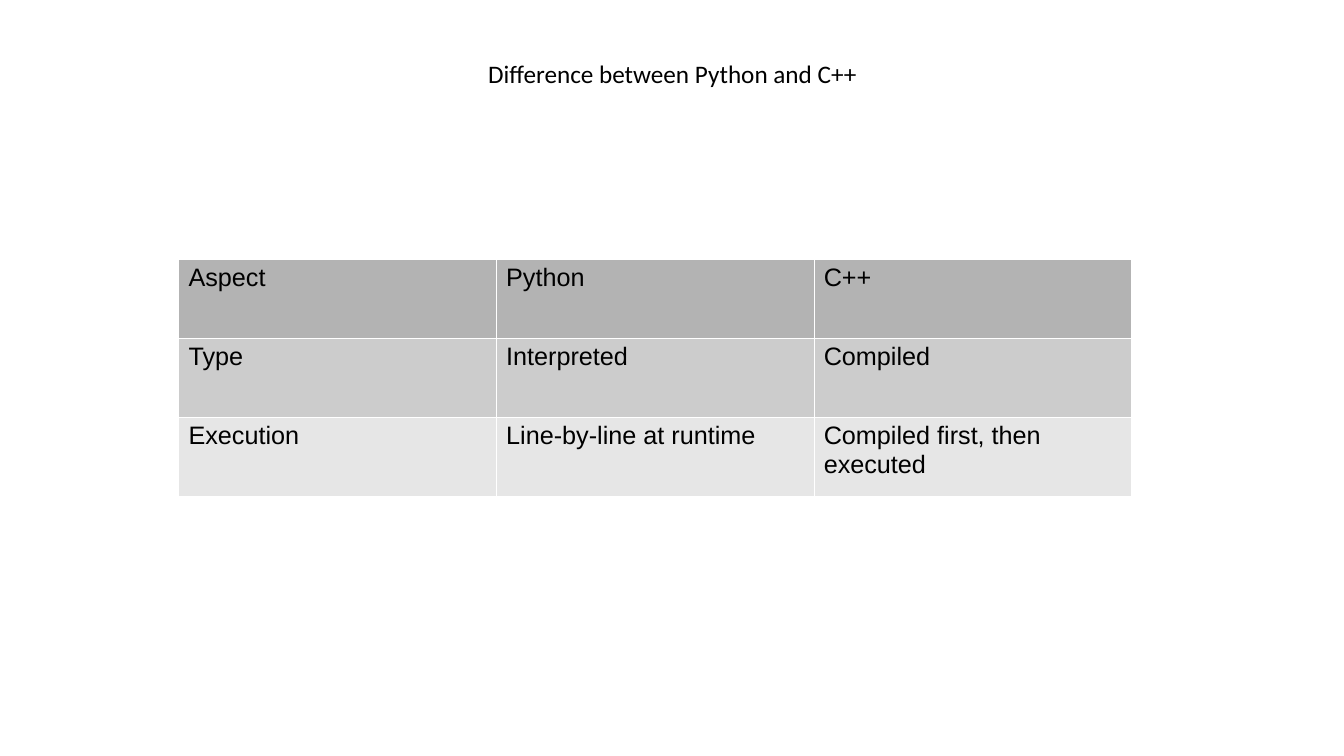
from pptx import Presentation
from pptx import util as u
from pptx.dml import color
from pptx.enum import text
from pptx.oxml import ns, xmlchemy

ROWS = [
    ("B3B3B3", ("Aspect", "Python", "C++")),
    ("CCCCCC", ("Type", "Interpreted", "Compiled")),
    ("E6E6E6", ("Execution", "Line-by-line at runtime", "Compiled first, then executed")),
]


def paint(target, shade):
    target.rgb = color.RGBColor.from_string(shade)


def write(frame, words, font):
    run = frame.paragraphs[0].add_run()
    run.text = words
    run.font.name = font
    run.font.size = u.Pt(18)
    paint(run.font.color, "000000")


def edge(cell, shade, width):
    props = cell._tc.get_or_add_tcPr()
    for place, side in enumerate(("lnL", "lnR", "lnT", "lnB")):
        line = xmlchemy.OxmlElement(f"a:{side}")
        line.set("w", str(u.Pt(width)))
        fill = xmlchemy.OxmlElement("a:solidFill")
        tint = xmlchemy.OxmlElement("a:srgbClr")
        tint.set("val", shade)
        fill.append(tint)
        line.append(fill)
        props.insert(place, line)


def add_title(slide, left, top, width, height):
    title = slide.shapes.title
    title.left, title.top = u.Inches(left), u.Inches(top)
    title.width, title.height = u.Inches(width), u.Inches(height)
    frame = title.text_frame
    frame.margin_left = frame.margin_right = 0
    frame.margin_top = frame.margin_bottom = 0
    frame.word_wrap = True
    frame.vertical_anchor = text.MSO_ANCHOR.MIDDLE
    frame.paragraphs[0].alignment = text.PP_ALIGN.CENTER
    write(frame, "Difference between Python and C++", "Calibri")


def add_grid(slide, left, top, width, height):
    box = [u.Inches(n) for n in (left, top, width, height)]
    frame = slide.shapes.add_table(len(ROWS), len(ROWS[0][1]), *box)
    table = frame.table
    table.first_row = table.horz_banding = False
    style = table._tbl.tblPr.find(ns.qn("a:tableStyleId"))
    style.text = "{2D5ABB26-0587-4C30-8999-92F81FD0307C}"
    for r, (shade, words) in enumerate(ROWS):
        for c, word in enumerate(words):
            cell = table.cell(r, c)
            cell.fill.solid()
            paint(cell.fill.fore_color, shade)
            edge(cell, "FFFFFF", 0.06)
            write(cell.text_frame, word, "Arial")


def main():
    deck = Presentation()
    deck.slide_width, deck.slide_height = u.Inches(13.33), u.Inches(7.5)
    slide = deck.slides.add_slide(deck.slide_layouts[5])
    add_title(slide, 1.18, 0.11, 10.98, 1.23)
    add_grid(slide, 1.77, 2.57, 9.45, 2.35)
    deck.save("out.pptx")


if __name__ == "__main__":
    main()
